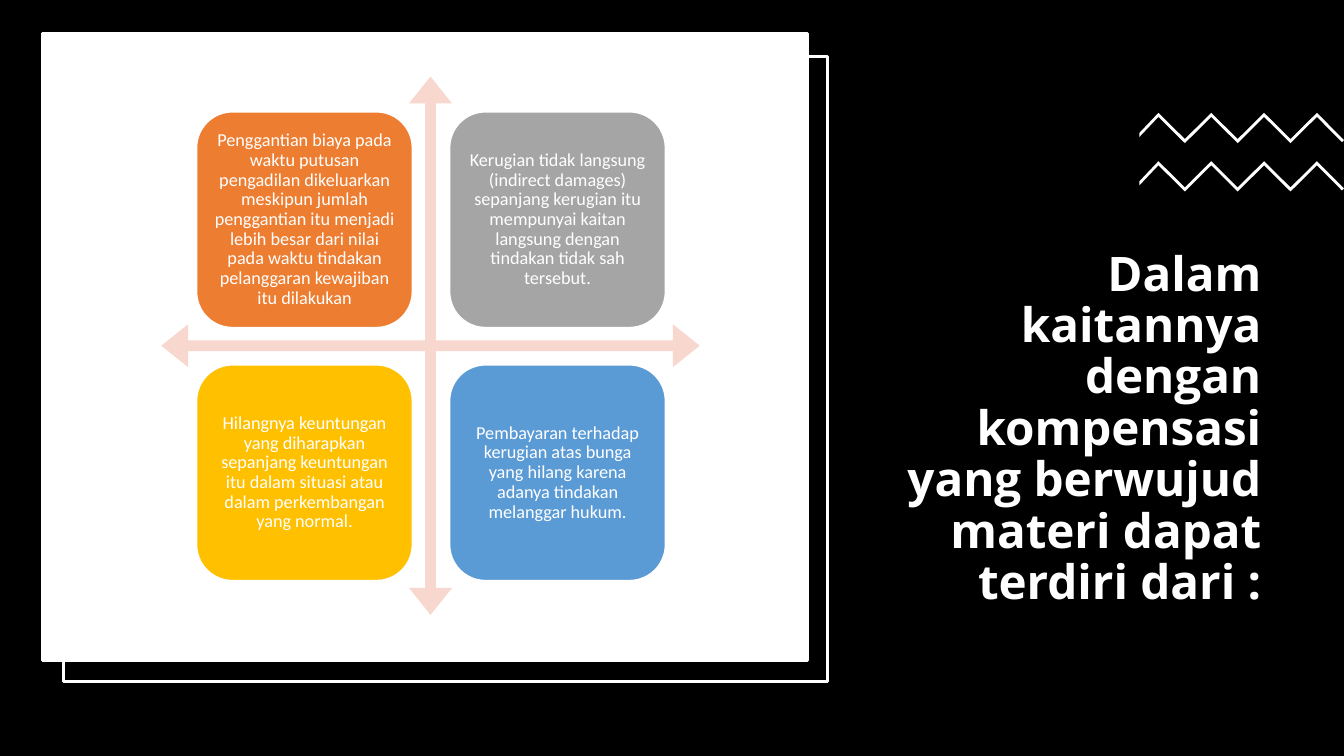
from dataclasses import dataclass

from pptx import Presentation
from pptx.dml.color import RGBColor
from pptx.enum.shapes import MSO_SHAPE as Preset
from pptx.enum.text import MSO_ANCHOR as Anchor, MSO_AUTO_SIZE as AutoSize, PP_ALIGN as Align
from pptx.util import Inches, Pt


@dataclass(frozen=True)
class Theme:
    black: str = "000000"
    white: str = "FFFFFF"
    arrows: str = "F8D7CE"
    cards: tuple = ("ED7D31", "A5A5A5", "FFC000", "5B9BD5")
    title_font: str = "Open Sans"
    title_size: int = 34
    card_font: str = "Calibri"
    card_size: int = 13


theme = Theme()


def paint(shape, fill, line=None, width=0):
    """Give a shape a flat fill and an optional outline, without shadow."""
    shape.shadow.inherit = False
    shape.fill.solid()
    shape.fill.fore_color.rgb = RGBColor.from_string(fill)
    if line:
        shape.line.color.rgb = RGBColor.from_string(line)
        shape.line.width = Pt(width)
    else:
        shape.line.fill.background()


def write(frame, text, font, size, align, anchor, bold=False):
    frame.text = text
    frame.word_wrap = True
    frame.auto_size = AutoSize.NONE
    frame.vertical_anchor = anchor
    paragraph = frame.paragraphs[0]
    paragraph.alignment = align
    paragraph.line_spacing = 0.9
    paragraph.font.name = font
    paragraph.font.size = Pt(size)
    paragraph.font.bold = bold
    paragraph.font.color.rgb = RGBColor.from_string(theme.white)


prs = Presentation()
prs.slide_width, prs.slide_height = Inches(13.33), Inches(7.5)
slide = prs.slides.add_slide(prs.slide_layouts[5])
slide.background.fill.solid()
slide.background.fill.fore_color.rgb = RGBColor.from_string(theme.black)
shapes = slide.shapes

# Title
title = shapes.title
title.left, title.top = Inches(8.7), Inches(2.4)
title.width, title.height = Inches(3.91), Inches(3.7)
write(title.text_frame,
      "Dalam kaitannya dengan kompensasi yang berwujud materi dapat terdiri dari :",
      theme.title_font, theme.title_size, Align.RIGHT, Anchor.BOTTOM, bold=True)

# White panel over an offset outline
for left, top, width, height, fill in [
    (0.63, 0.56, 7.58, 6.2, theme.black),
    (0.42, 0.33, 7.59, 6.22, theme.white),
]:
    panel = shapes.add_shape(Preset.RECTANGLE, Inches(left), Inches(top),
                             Inches(width), Inches(height))
    paint(panel, fill, theme.white, 2.25)

# Zigzag bands
thickness = 0.04
for top in (1.12, 1.6):
    crest = [(11.49 + 0.262 * i, top + 0.26 * (i % 2)) for i in range(7)]
    underside = [(x, y + thickness) for x, y in reversed(crest)]
    right_end = [(13.33, top + 0.27), (13.31, top + 0.29)]
    left_end = [(11.3, top + 0.24), (11.3, top + 0.2)]
    outline = [(Inches(x), Inches(y)) for x, y in crest + right_end + underside + left_end]
    builder = shapes.build_freeform(*outline[0])
    builder.add_line_segments(outline[1:], close=True)
    paint(builder.convert_to_shape(), theme.white)

# Four-way arrow
cross = shapes.add_shape(Preset.QUAD_ARROW, Inches(1.6), Inches(0.76), Inches(5.34), Inches(5.34))
for index, ratio in enumerate((0.02, 0.04, 0.05)):
    cross.adjustments[index] = ratio
paint(cross, theme.arrows)

# Compensation cards, two by two
compensations = [
    "Penggantian biaya pada waktu putusan pengadilan dikeluarkan meskipun jumlah "
    "penggantian itu menjadi lebih besar dari nilai pada waktu tindakan pelanggaran "
    "kewajiban itu dilakukan",
    "Kerugian tidak langsung (indirect damages) sepanjang kerugian itu mempunyai "
    "kaitan langsung dengan tindakan tidak sah tersebut.",
    "Hilangnya keuntungan yang diharapkan sepanjang keuntungan itu dalam situasi atau "
    "dalam perkembangan yang normal.",
    "Pembayaran terhadap kerugian atas bunga yang hilang karena adanya tindakan "
    "melanggar hukum.",
]
card_side, card_pitch = 2.14, 2.51
for index, (compensation, color) in enumerate(zip(compensations, theme.cards)):
    row, column = divmod(index, 2)
    card = shapes.add_shape(Preset.ROUNDED_RECTANGLE,
                            Inches(1.95 + column * card_pitch), Inches(1.11 + row * card_pitch),
                            Inches(card_side), Inches(card_side))
    paint(card, color, theme.white, 1)
    frame = card.text_frame
    frame.margin_left = frame.margin_right = Inches(0.05)
    frame.margin_top = frame.margin_bottom = Inches(0.05)
    write(frame, compensation, theme.card_font, theme.card_size, Align.CENTER, Anchor.MIDDLE)

prs.save("out.pptx")
